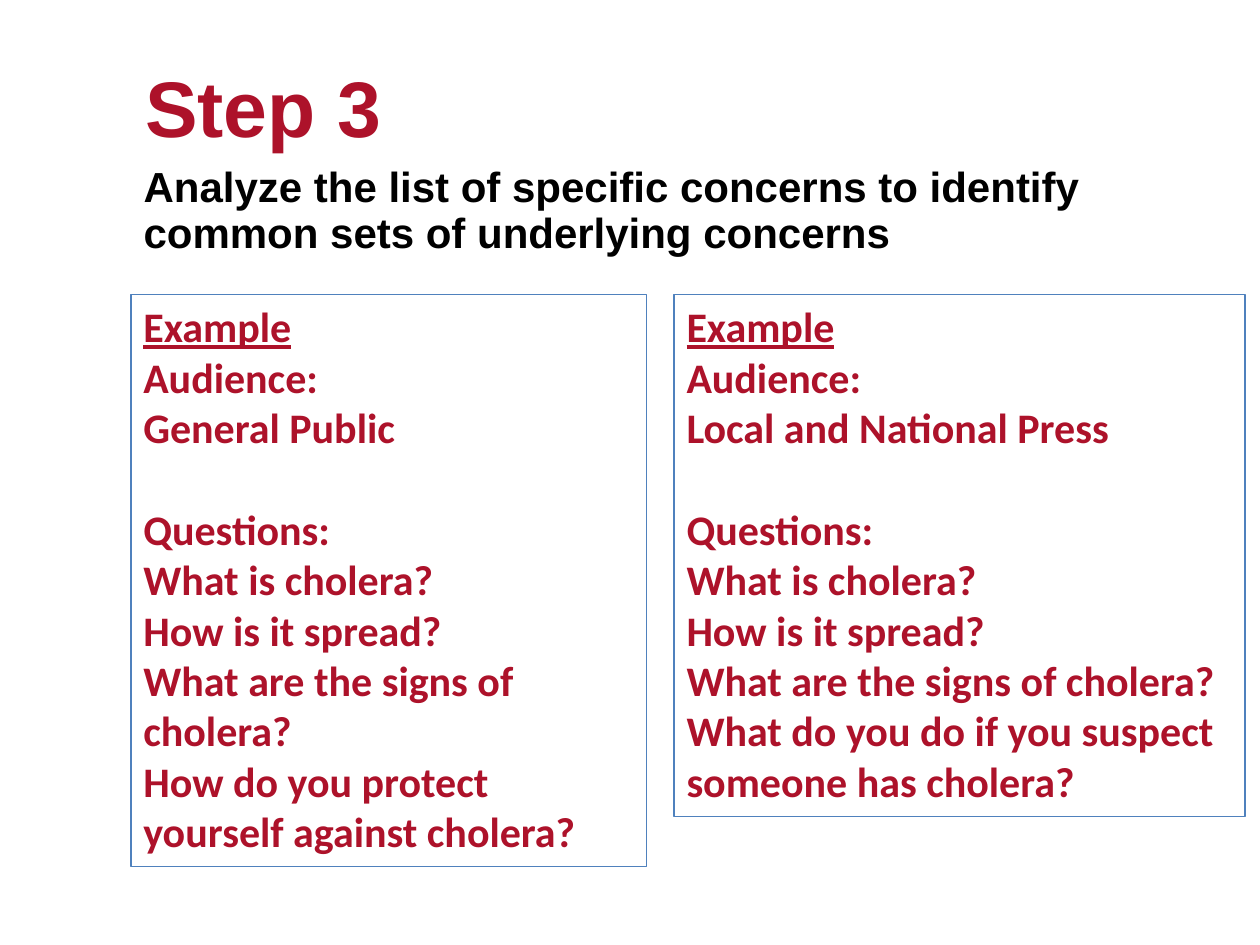
from pptx import Presentation
from pptx.dml.color import RGBColor
from pptx.enum.text import MSO_ANCHOR, MSO_AUTO_SIZE, PP_ALIGN
from pptx.oxml.ns import qn
from pptx.util import Cm, Pt
from lxml import etree

LEFT, TOP, BOTTOM = PP_ALIGN.LEFT, MSO_ANCHOR.TOP, MSO_ANCHOR.BOTTOM
NO_FIT, GROW = MSO_AUTO_SIZE.NONE, MSO_AUTO_SIZE.SHAPE_TO_FIT_TEXT
RED, BLACK, BLUE = "AD122A", "000000", "4F81BD"

TITLE = "Step 3"
BODY = "Analyze the list of specific concerns to identify common sets of underlying concerns"
SHARED = ["Questions:", "What is cholera?", "How is it spread?",
          "What are the signs of cholera?"]
EXAMPLES = [
    ("General Public", "How do you protect yourself against cholera?", 10.39, 11.53),
    ("Local and National Press", "What do you do if you suspect someone has cholera?",
     11.51, 10.52),
]
BOX_LEFT, BOX_TOP, BOX_GAP = 2.64, 5.94, 0.56
BLANK_LINE = 29.3


def rgb(value):
    """Turn a hex string into a colour."""
    return RGBColor.from_string(value)


def place(shape, left, top, width, height):
    """Position a shape in centimetres."""
    shape.left, shape.top = Cm(left), Cm(top)
    shape.width, shape.height = Cm(width), Cm(height)


def format_text(p, font, size, color):
    """Left-align a paragraph and format its runs."""
    p.alignment = LEFT
    p.space_before = Pt(0)
    for r in p.runs:
        r.font.name, r.font.size, r.font.bold = font, Pt(size), True
        r.font.color.rgb = rgb(color)


def fill_placeholder(shape, text, size, color, anchor):
    """Write one unbulleted Arial paragraph into a placeholder."""
    tf = shape.text_frame
    tf.text = text
    tf.word_wrap, tf.auto_size, tf.vertical_anchor = True, NO_FIT, anchor
    p = tf.paragraphs[0]
    format_text(p, "Arial", size, color)
    p.line_spacing = 0.9
    pPr = p._p.get_or_add_pPr()
    pPr.set("marL", "0")
    pPr.set("indent", "0")
    etree.SubElement(pPr, qn("a:buNone"))


def add_example(s, left, audience, question, width, height):
    """Add an outlined box with an audience and its questions."""
    box = s.shapes.add_textbox(Cm(left), Cm(BOX_TOP), Cm(width), Cm(height))
    box.line.color.rgb = rgb(BLUE)
    box.line.width = Pt(0.75)
    tf = box.text_frame
    tf.word_wrap, tf.auto_size = True, GROW
    tf.text = "\n".join(["Example", "Audience:", audience, *SHARED, question])
    for p in tf.paragraphs:
        format_text(p, "Calibri", 24, RED)
        if p.text == SHARED[0]:
            p.space_before = Pt(BLANK_LINE)
    tf.paragraphs[0].runs[0].font.underline = True


def main():
    """Build and save the slide."""
    prs = Presentation()
    prs.slide_width, prs.slide_height = Cm(25.4), Cm(19.05)
    s = prs.slides.add_slide(prs.slide_layouts[1])
    title, body = s.placeholders
    place(title, 2.67, 1.09, 21.13, 2.03)
    fill_placeholder(title, TITLE, 45, RED, BOTTOM)
    title.text_frame.margin_top = title.text_frame.margin_bottom = 0
    place(body, 2.64, 3.23, 21.87, 3.28)
    fill_placeholder(body, BODY, 24, BLACK, TOP)
    left = BOX_LEFT
    for audience, question, width, height in EXAMPLES:
        add_example(s, left, audience, question, width, height)
        left += width + BOX_GAP
    prs.save("out.pptx")


if __name__ == "__main__":
    main()
